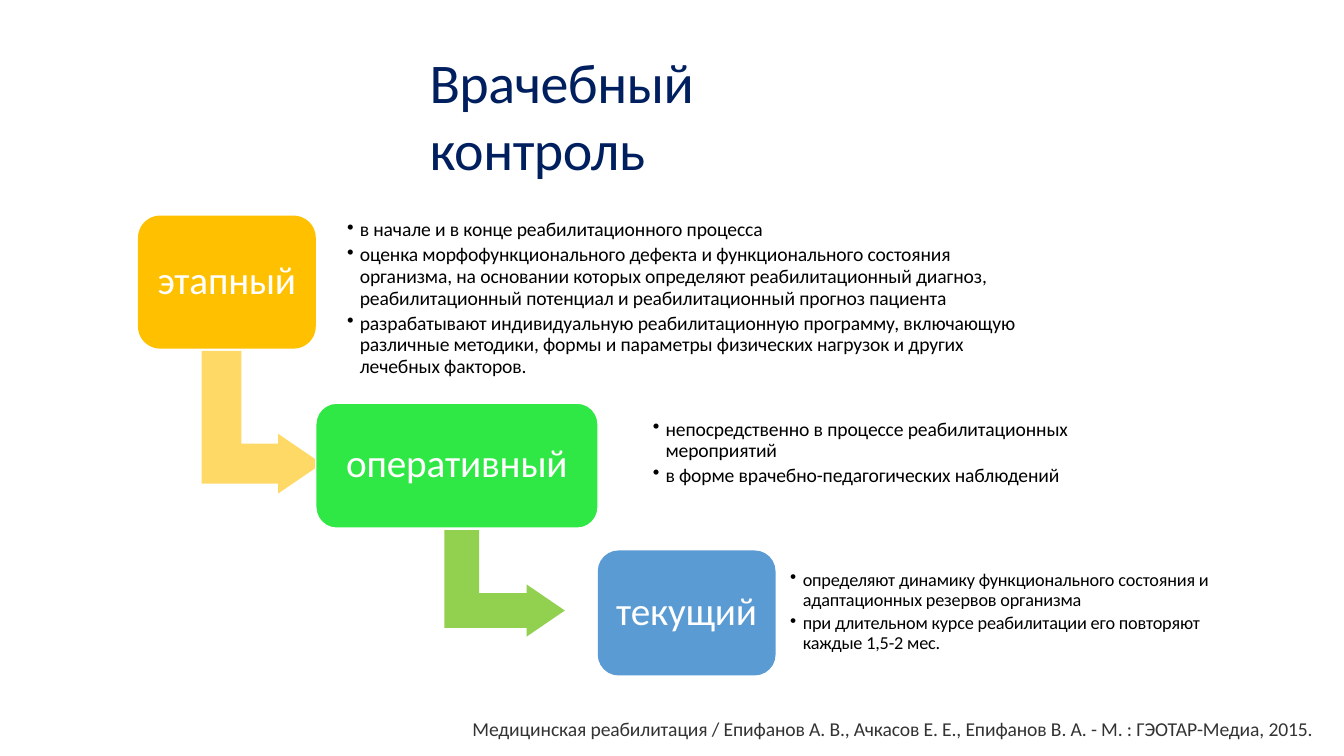
import pptx
import pptx.dml.color
import pptx.enum.shapes
import pptx.enum.text
import pptx.oxml.ns
import pptx.util
from lxml import etree

Pt = pptx.util.Pt
ALIGN = pptx.enum.text.PP_ALIGN
ANCHOR = pptx.enum.text.MSO_ANCHOR
COLORS = {
    "title": "001F5F", "text": "000000", "source": "333333", "white": "FFFFFF",
    "amber": "FFC000", "sand": "FFD966", "green": "2FE845", "lime": "92D050",
    "blue": "5B9BD4",
}


class ControlSlide:
    """Style and drawing methods for the medical control slide."""

    def __init__(self, page, font="Calibri"):
        self.page = page
        self.font = font

    def color(self, name):
        return pptx.dml.color.RGBColor.from_string(COLORS[name])

    def place(self, box, left, top, width, height):
        box.left, box.top = Pt(left), Pt(top)
        box.width, box.height = Pt(width), Pt(height)

    def frame(self, box, anchor=ANCHOR.TOP, bottom=0):
        frame = box.text_frame
        frame.word_wrap = True
        frame.auto_size = pptx.enum.text.MSO_AUTO_SIZE.NONE
        frame.vertical_anchor = anchor
        frame.margin_left = frame.margin_top = frame.margin_right = 0
        frame.margin_bottom = Pt(bottom)
        return frame

    def style(self, para, size, color, align=ALIGN.LEFT, tracking=-0.1):
        para.alignment = align
        for span in para.runs:
            span.font.name = self.font
            span.font.size = Pt(size)
            span.font.color.rgb = self.color(color)
            span._r.get_or_add_rPr().set("spc", str(round(tracking * 100)))

    def title(self, text, *bounds):
        box = self.page.shapes.title
        self.place(box, *bounds)
        frame = self.frame(box)
        frame.text = text
        para = frame.paragraphs[0]
        para.line_spacing = 1.0
        para.space_before = Pt(0)
        self.style(para, 40, "title", tracking=-0.3)

    def line(self, text, size, color, *bounds):
        box = self.page.shapes.add_textbox(*map(Pt, bounds))
        frame = self.frame(box)
        frame.text = text
        self.style(frame.paragraphs[0], size, color)

    def bullets(self, items, size, *bounds):
        box = self.page.shapes.add_textbox(*map(Pt, bounds))
        frame = self.frame(box)
        frame.text = "\n".join(items)
        for index, para in enumerate(frame.paragraphs):
            properties = para._p.get_or_add_pPr()
            properties.set("marL", str(Pt(10)))
            properties.set("indent", str(-Pt(9)))
            bullet = etree.SubElement(properties, pptx.oxml.ns.qn("a:buChar"))
            bullet.set("char", "•")
            para.line_spacing = 0.92
            if index:
                para.space_before = Pt(2.3)
            self.style(para, size, "text")

    def paint(self, shape, fill, outline=None):
        shape.shadow.inherit = False
        shape.fill.solid()
        shape.fill.fore_color.rgb = self.color(fill)
        if outline:
            shape.line.color.rgb = self.color(outline)
            shape.line.width = Pt(0.96)
        else:
            shape.line.fill.background()

    def stage(self, text, fill, outline, *bounds):
        kind = pptx.enum.shapes.MSO_SHAPE.ROUNDED_RECTANGLE
        box = self.page.shapes.add_shape(kind, *map(Pt, bounds))
        self.paint(box, fill, outline)
        frame = self.frame(box, ANCHOR.MIDDLE, bottom=5)
        frame.text = text
        self.style(frame.paragraphs[0], 28, "white", ALIGN.CENTER)

    def bent_arrow(self, fill, left, top, width, height, shaft):
        half_head = shaft * 0.75
        tip_x, tip_y = left + width, top + height - half_head
        head_x = tip_x - shaft * 1.1
        upper, lower = tip_y - shaft / 2, tip_y + shaft / 2
        points = [
            (left, top), (left, lower), (head_x, lower),
            (head_x, tip_y + half_head), (tip_x, tip_y),
            (head_x, tip_y - half_head), (head_x, upper),
            (left + shaft, upper), (left + shaft, top),
        ]
        corners = [(Pt(x), Pt(y)) for x, y in points]
        builder = self.page.shapes.build_freeform(*corners[0])
        builder.add_line_segments(corners[1:], close=True)
        self.paint(builder.convert_to_shape(), fill)


def main():
    deck = pptx.Presentation()
    deck.slide_width, deck.slide_height = Pt(960), Pt(540)
    slide = ControlSlide(deck.slides.add_slide(deck.slide_layouts[5]))

    slide.title("Врачебный контроль", 306.8, 33.8, 340, 100)

    slide.bent_arrow("sand", 144, 250.6, 86, 102, 28.5)
    slide.stage("этапный", "amber", None, 98.6, 154, 127, 95)
    slide.bullets([
        "в начале и в конце реабилитационного процесса",
        "оценка морфофункционального дефекта и функционального состояния "
        "организма, на основании которых определяют реабилитационный диагноз, "
        "реабилитационный потенциал и реабилитационный прогноз пациента",
        "разрабатывают индивидуальную реабилитационную программу, включающую "
        "различные методики, формы и параметры физических нагрузок и других "
        "лечебных факторов.",
    ], 14, 247, 156.9, 491, 115)

    slide.bent_arrow("lime", 317.5, 378.7, 86, 76, 24.8)
    slide.stage("оперативный", "green", "white", 225.6, 288, 201.6, 89.3)
    slide.bullets([
        "непосредственно в процессе реабилитационных мероприятий",
        "в форме врачебно-педагогических наблюдений",
    ], 14, 465.4, 299.1, 306, 52)

    slide.stage("текущий", "blue", None, 427, 393.2, 127, 89.3)
    slide.bullets([
        "определяют динамику функционального состояния и "
        "адаптационных резервов организма",
        "при длительном курсе реабилитации его повторяют каждые 1,5-2 мес.",
    ], 13, 563.4, 407.3, 309, 62)

    slide.line(
        "Медицинская реабилитация / Епифанов А. В., Ачкасов Е. Е., "
        "Епифанов В. А. - М. : ГЭОТАР-Медиа, 2015.",
        14, "source", 337.5, 512, 620, 19)

    deck.save("out.pptx")


if __name__ == "__main__":
    main()
